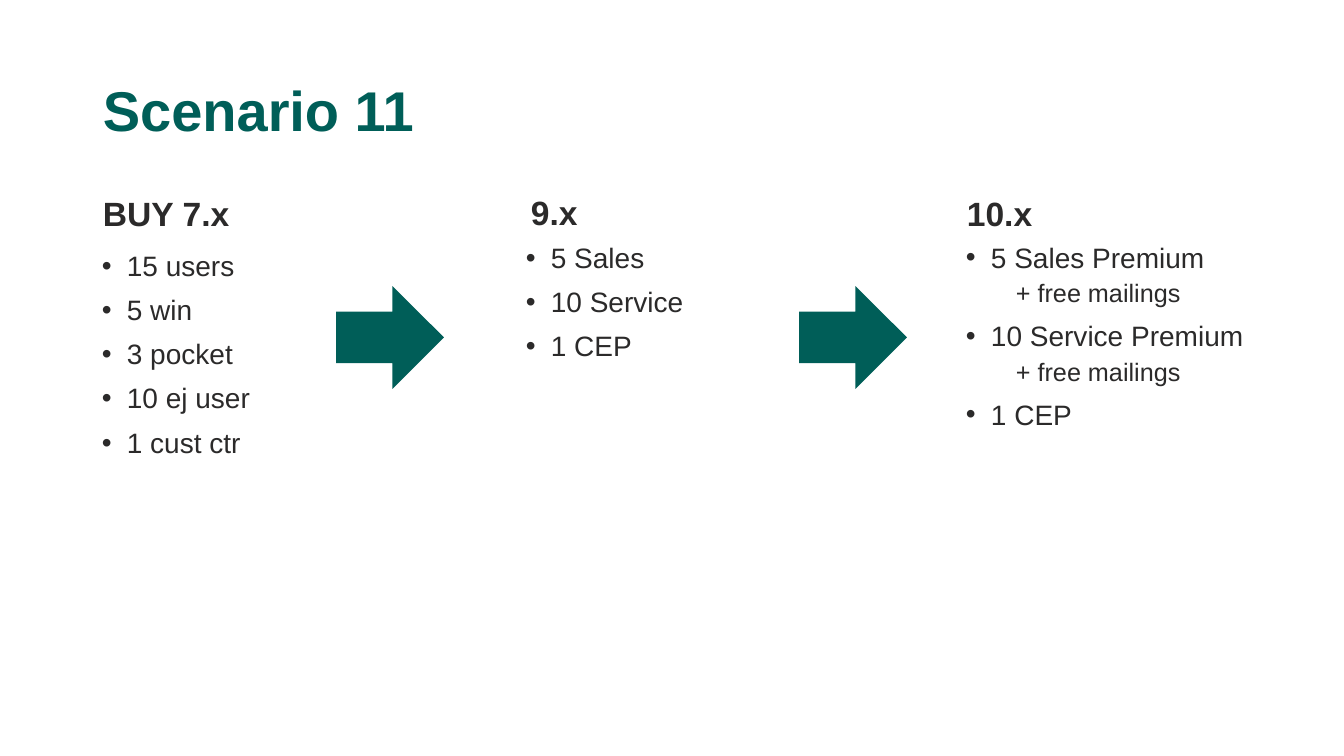
from lxml import etree
from pptx import Presentation
from pptx import util as u
from pptx.dml.color import RGBColor
from pptx.enum import shapes, text
from pptx.oxml.ns import qn

PX = 914400 / 100.8
COLORS = {"green": "005E58", "ink": "2B2A2A"}
FONT = "Arial"
INDENT = 25

# Each version: heading, heading box, list box, (level, item) pairs
VERSIONS = [
    ("BUY 7.x", (93, 149, 301, 90), (92, 247, 244, 406),
     [(0, "15 users"), (0, "5 win"), (0, "3 pocket"),
      (0, "10 ej user"), (0, "1 cust ctr")]),
    ("9.x", (521, 148, 229, 90), (516, 239, 274, 355),
     [(0, "5 Sales"), (0, "10 Service"), (0, "1 CEP")]),
    ("10.x", (957, 148, 249, 91), (956, 239, 338, 299),
     [(0, "5 Sales Premium"), (1, "+ free mailings"),
      (0, "10 Service Premium"), (1, "+ free mailings"), (0, "1 CEP")]),
]
ARROWS = [(336, 286, 108, 103), (799, 286, 108, 103)]


def px(*lengths):
    return [u.Emu(round(length * PX)) for length in lengths]


def add_frame(slide, box, anchor):
    frame = slide.shapes.add_textbox(*px(*box)).text_frame
    frame.word_wrap = True
    frame.vertical_anchor = anchor
    return frame


def style(paragraph, size, color, bold=False):
    paragraph.line_spacing = 0.9
    font = paragraph.font
    font.name, font.size, font.bold = FONT, u.Pt(size), bold
    font.color.rgb = RGBColor.from_string(COLORS[color])


def add_heading(slide, box, words, size, color, anchor):
    heading = add_frame(slide, box, anchor).paragraphs[0]
    heading.text = words
    style(heading, size, color, bold=True)


def add_items(slide, box, items):
    frame = add_frame(slide, box, text.MSO_ANCHOR.TOP)
    for index, (level, words) in enumerate(items):
        item = frame.paragraphs[0] if index == 0 else frame.add_paragraph()
        item.text = words
        item.level = level
        if index:
            item.space_before = u.Pt(5 if level else 10)
        # Bullets on the first level, a plain indent on the second
        props = item._p.get_or_add_pPr()
        margin, = px(INDENT * (level + 1))
        hanging, = px(0 if level else -INDENT)
        props.set("marL", str(margin))
        props.set("indent", str(hanging))
        if level:
            etree.SubElement(props, qn("a:buNone"))
        else:
            etree.SubElement(props, qn("a:buFont"), typeface=FONT)
            etree.SubElement(props, qn("a:buChar"), char="•")
        style(item, 18 if level else 20, "ink")


def add_version(slide, heading, heading_box, list_box, items):
    add_heading(slide, heading_box, heading, 24, "ink",
                text.MSO_ANCHOR.BOTTOM)
    add_items(slide, list_box, items)


def add_arrow(slide, box):
    arrow = slide.shapes.add_shape(shapes.MSO_SHAPE.RIGHT_ARROW, *px(*box))
    arrow.shadow.inherit = False
    arrow.fill.solid()
    arrow.fill.fore_color.rgb = RGBColor.from_string(COLORS["green"])
    arrow.line.fill.background()


def main():
    deck = Presentation()
    deck.slide_width, deck.slide_height = px(1344, 756)
    slide = deck.slides.add_slide(deck.slide_layouts[6])

    # Title
    add_heading(slide, (93, 40, 1159, 146), "Scenario 11", 40, "green",
                text.MSO_ANCHOR.MIDDLE)
    # Versions, with the upgrade arrows between them
    for version in VERSIONS:
        add_version(slide, *version)
    for box in ARROWS:
        add_arrow(slide, box)

    deck.save("out.pptx")


if __name__ == "__main__":
    main()
